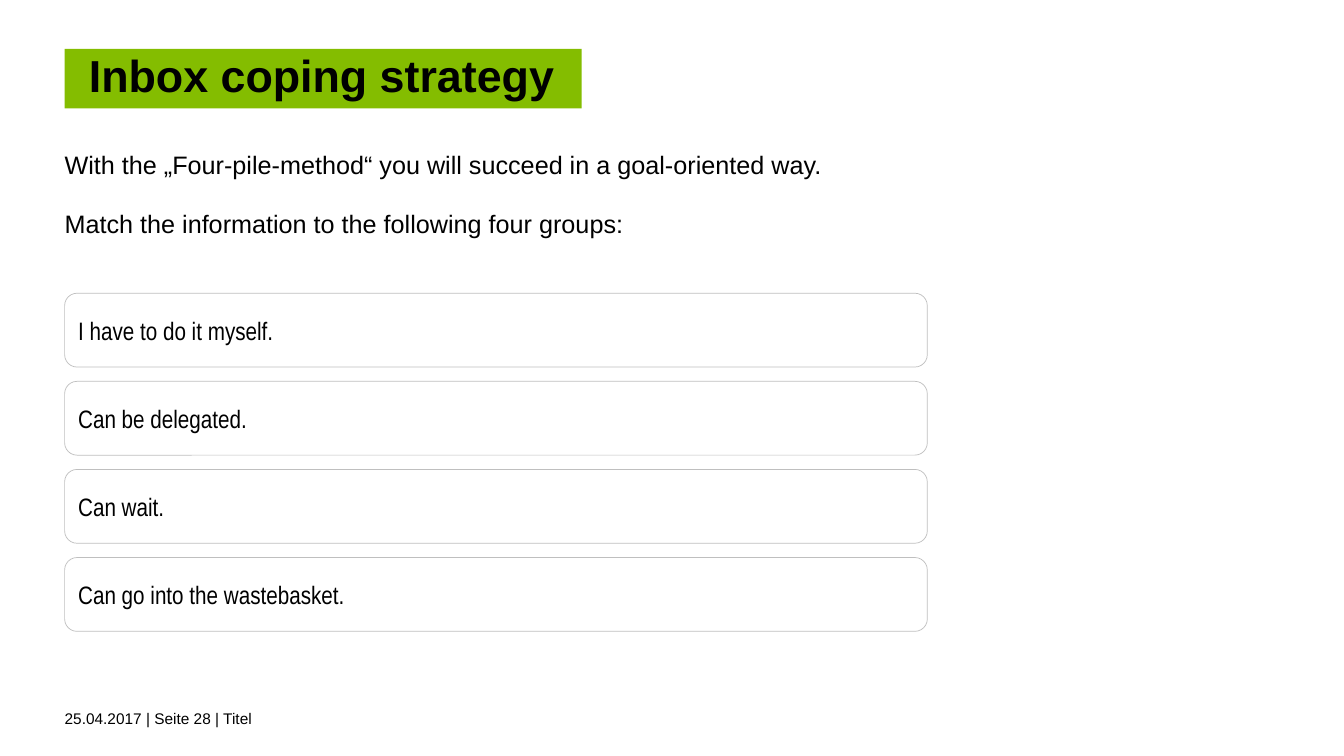
import dataclasses

import pptx
import pptx.dml.color
import pptx.enum.shapes
import pptx.enum.text
import pptx.util

Cm = pptx.util.Cm
Pt = pptx.util.Pt
Align = pptx.enum.text.PP_ALIGN
Anchor = pptx.enum.text.MSO_ANCHOR
Shape = pptx.enum.shapes.MSO_SHAPE


@dataclasses.dataclass(frozen=True)
class Theme:
    ink: str = "000000"
    green: str = "84BD00"
    paper: str = "FFFFFF"
    edge: str = "BFBFBF"
    font: str = "Arial"
    narrow: str = "Arial Narrow"
    head: int = 32
    body: int = 18
    foot: int = 11


THEME = Theme()
LEFT = 1.63
PILES = [
    "I have to do it myself.",
    "Can be delegated.",
    "Can wait.",
    "Can go into the wastebasket.",
]


def paint(fill, color):
    fill.solid()
    fill.fore_color.rgb = pptx.dml.color.RGBColor.from_string(color)


def style(frame, size, font, bold=False):
    for para in frame.paragraphs:
        for run in para.runs:
            run.font.name = font
            run.font.size = Pt(size)
            run.font.bold = bold
            run.font.color.rgb = pptx.dml.color.RGBColor.from_string(THEME.ink)


def add_text(slide, box, lines, size, bold=False, inset=(0, 0.25), wrap=True):
    shape = slide.shapes.add_textbox(*map(Cm, box))
    frame = shape.text_frame
    frame.word_wrap = wrap
    frame.margin_left, frame.margin_right = map(Cm, inset)
    frame.text = "\n".join(lines)
    style(frame, size, THEME.font, bold)
    return shape


def add_title(slide, text):
    box = (LEFT, 1.23, 13.03, 1.5)
    shape = add_text(slide, box, [text], THEME.head, True, (0.61, 0.61), False)
    paint(shape.fill, THEME.green)
    shape.text_frame.paragraphs[0].line_spacing = 0.9


def add_body(slide, lines):
    shape = add_text(slide, (LEFT, 3.63, 30.61, 3), lines, THEME.body)
    for para in shape.text_frame.paragraphs[1:]:
        para.space_before = Pt(20.5)


def add_pile(slide, top, text):
    box = (LEFT, top, 21.74, 1.86)
    shape = slide.shapes.add_shape(Shape.ROUNDED_RECTANGLE, *map(Cm, box))
    shape.shadow.inherit = False
    paint(shape.fill, THEME.paper)
    paint(shape.line.fill, THEME.edge)
    shape.line.width = Pt(0.5)
    frame = shape.text_frame
    frame.word_wrap = True
    frame.vertical_anchor = Anchor.MIDDLE
    frame.text = text
    frame.paragraphs[0].alignment = Align.JUSTIFY
    style(frame, THEME.body, THEME.narrow)


def main():
    deck = pptx.Presentation()
    deck.slide_width = Cm(33.87)
    deck.slide_height = Cm(19.05)
    slide = deck.slides.add_slide(deck.slide_layouts[6])
    add_text(slide, (LEFT, 17.75, 20.32, 1.02),
             ["25.04.2017 | Seite 28 | Titel"], THEME.foot)
    add_title(slide, "Inbox coping strategy")
    add_body(slide, [
        "With the „Four-pile-method“ you will succeed in a goal-oriented way.",
        "Match the information to the following four groups:",
    ])
    for row, text in enumerate(PILES):
        add_pile(slide, 7.39 + row * 2.22, text)
    deck.save("out.pptx")


if __name__ == "__main__":
    main()
